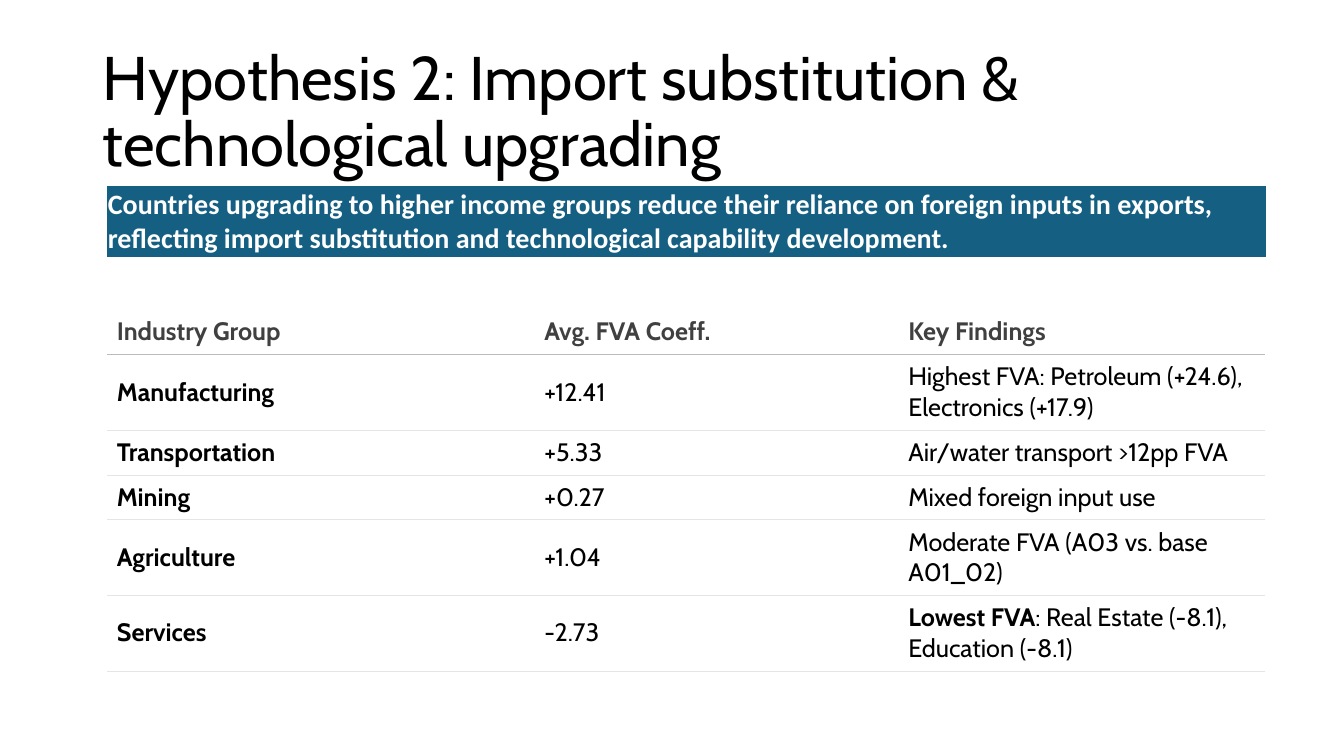
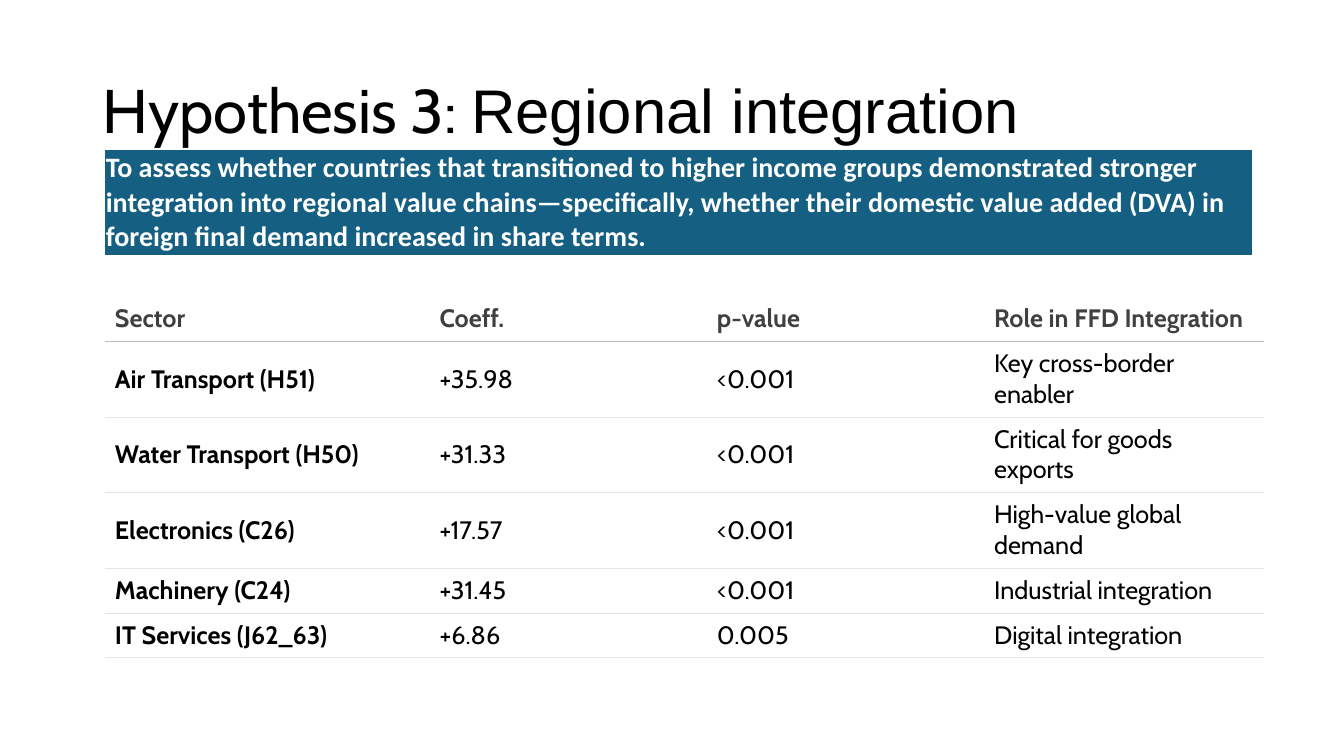
from dataclasses import dataclass

from lxml import etree
from pptx import Presentation
from pptx.dml.color import RGBColor
from pptx.enum.text import MSO_ANCHOR, MSO_AUTO_SIZE, PP_ALIGN
from pptx.oxml.ns import qn
from pptx.presentation import Presentation as Deck
from pptx.slide import Slide
from pptx.table import Table, _Cell
from pptx.text.text import _Paragraph
from pptx.util import Emu, Pt

MIDDLE = MSO_ANCHOR.MIDDLE
LEFT = PP_ALIGN.LEFT
NO_AUTOFIT = MSO_AUTO_SIZE.NONE

EMU_PER_PX = 9144  # 100 px to the inch
TITLE_ONLY_LAYOUT = 5


@dataclass(frozen=True)
class Theme:
    title_font: str = "Cabin"
    alternate_title_font: str = "Arial"
    table_font: str = "Cabin"
    banner_font: str = "Calibri"
    title_size: int = 44
    banner_size: int = 20
    table_size: int = 18
    rule_width: float = 0.33
    text: str = "000000"
    header_text: str = "404040"
    banner_text: str = "FFFFFF"
    banner_fill: str = "156082"
    cell_fill: str = "FFFFFF"
    header_rule: str = "BBBBBB"
    row_rule: str = "E5E5E5"


THEME = Theme()


@dataclass(frozen=True)
class Box:
    left: int
    top: int
    width: int
    height: int


@dataclass(frozen=True)
class TextPart:
    text: str
    bold: bool = False
    font: str = THEME.title_font


CellText = str | tuple[TextPart, ...]


@dataclass(frozen=True)
class Row:
    cells: tuple[CellText, ...]
    lines: int = 1


@dataclass(frozen=True)
class HypothesisSlide:
    title: tuple[TextPart, ...]
    banner: str
    banner_box: Box
    table_left: int
    table_top: int
    column_widths: tuple[int, ...]
    rows: tuple[Row, ...]


TITLE_BOX = Box(92, 40, 1150, 145)
ROW_HEIGHTS = {1: 44, 2: 75}
CELL_INSET = 7
FIRST_COLUMN_INSET = 10
BANNER_INSET = 1

SLIDES = (
    HypothesisSlide(
        title=(TextPart("Hypothesis 2: Import substitution & technological upgrading"),),
        banner=(
            "Countries upgrading to higher income groups reduce their reliance on foreign "
            "inputs in exports, reflecting import substitution and technological capability "
            "development."
        ),
        banner_box=Box(106, 185, 1150, 69),
        table_left=106,
        table_top=307,
        column_widths=(427, 361, 361),
        rows=(
            Row(("Industry Group", "Avg. FVA Coeff.", "Key Findings")),
            Row(("Manufacturing", "+12.41",
                 "Highest FVA: Petroleum (+24.6), Electronics (+17.9)"), lines=2),
            Row(("Transportation", "+5.33", "Air/water transport >12pp FVA")),
            Row(("Mining", "+0.27", "Mixed foreign input use")),
            Row(("Agriculture", "+1.04", "Moderate FVA (A03 vs. base A01_02)"), lines=2),
            Row(("Services", "-2.73",
                 (TextPart("Lowest FVA", bold=True),
                  TextPart(": Real Estate (-8.1), Education (-8.1)"))), lines=2),
        ),
    ),
    HypothesisSlide(
        title=(
            TextPart("Hypothesis 3: "),
            TextPart("Regional integration", font=THEME.alternate_title_font),
        ),
        banner=(
            "To assess whether countries that transitioned to higher income groups "
            "demonstrated stronger integration into regional value chains—specifically, "
            "whether their domestic value added (DVA) in foreign final demand increased "
            "in share terms."
        ),
        banner_box=Box(104, 149, 1138, 102),
        table_left=104,
        table_top=294,
        column_widths=(325, 275, 275, 275),
        rows=(
            Row(("Sector", "Coeff.", "p-value", "Role in FFD Integration")),
            Row(("Air Transport (H51)", "+35.98", "<0.001", "Key cross-border enabler"), lines=2),
            Row(("Water Transport (H50)", "+31.33", "<0.001", "Critical for goods exports"), lines=2),
            Row(("Electronics (C26)", "+17.57", "<0.001", "High-value global demand"), lines=2),
            Row(("Machinery (C24)", "+31.45", "<0.001", "Industrial integration")),
            Row(("IT Services (J62_63)", "+6.86", "0.005", "Digital integration")),
        ),
    ),
)


def px(length: int) -> Emu:
    return Emu(length * EMU_PER_PX)


def add_text(paragraph: _Paragraph, text: str, *, font: str, size: int,
             color: str, bold: bool = False) -> None:
    run = paragraph.add_run()
    run.text = text
    run.font.name = font
    run.font.size = Pt(size)
    run.font.bold = bold
    run.font.color.rgb = RGBColor.from_string(color)


def set_borders(cell: _Cell, **colors: str | None) -> None:
    """Set cell borders by side, in the order L, R, T, B; None hides a border."""
    properties = cell._tc.get_or_add_tcPr()
    for side, color in colors.items():
        line = etree.SubElement(properties, qn(f"a:ln{side}"), w=str(Pt(THEME.rule_width)))
        if color is None:
            etree.SubElement(line, qn("a:noFill"))
        else:
            fill = etree.SubElement(line, qn("a:solidFill"))
            etree.SubElement(fill, qn("a:srgbClr"), val=color)


def format_cell(cell: _Cell, *, fill: str, inset: int, left_inset: int,
                top_rule: str | None = None, bottom_rule: str | None = None) -> None:
    set_borders(cell, L=None, R=None, T=top_rule, B=bottom_rule)
    cell.fill.solid()
    cell.fill.fore_color.rgb = RGBColor.from_string(fill)
    cell.vertical_anchor = MIDDLE
    cell.margin_left = px(left_inset)
    cell.margin_right = cell.margin_top = cell.margin_bottom = px(inset)


def add_plain_table(slide: Slide, left: int, top: int, column_widths: tuple[int, ...],
                    row_heights: tuple[int, ...]) -> Table:
    """Add a table without header or banding style."""
    frame = slide.shapes.add_table(
        len(row_heights), len(column_widths),
        px(left), px(top), px(sum(column_widths)), px(sum(row_heights)),
    )
    table = frame.table
    table.first_row = table.horz_banding = False
    for column, width in zip(table.columns, column_widths):
        column.width = px(width)
    for row, height in zip(table.rows, row_heights):
        row.height = px(height)
    return table


def add_title(slide: Slide, parts: tuple[TextPart, ...]) -> None:
    title = slide.shapes.title
    title.left, title.top = px(TITLE_BOX.left), px(TITLE_BOX.top)
    title.width, title.height = px(TITLE_BOX.width), px(TITLE_BOX.height)
    frame = title.text_frame
    frame.auto_size = NO_AUTOFIT
    frame.word_wrap = True
    frame.vertical_anchor = MIDDLE
    paragraph = frame.paragraphs[0]
    paragraph.alignment = LEFT
    paragraph.line_spacing = 0.9
    for part in parts:
        add_text(paragraph, part.text, font=part.font, size=THEME.title_size, color=THEME.text)


def add_banner(slide: Slide, text: str, box: Box) -> None:
    table = add_plain_table(slide, box.left, box.top, (box.width,), (box.height,))
    cell = table.cell(0, 0)
    format_cell(cell, fill=THEME.banner_fill, inset=BANNER_INSET, left_inset=BANNER_INSET)
    add_text(cell.text_frame.paragraphs[0], text, font=THEME.banner_font,
             size=THEME.banner_size, color=THEME.banner_text, bold=True)


def add_findings_table(slide: Slide, content: HypothesisSlide) -> None:
    heights = tuple(ROW_HEIGHTS[row.lines] for row in content.rows)
    table = add_plain_table(slide, content.table_left, content.table_top,
                            content.column_widths, heights)
    for row_index, row in enumerate(content.rows):
        is_header = row_index == 0
        top_rule = (None, THEME.header_rule, THEME.row_rule)[min(row_index, 2)]
        bottom_rule = THEME.header_rule if is_header else THEME.row_rule
        color = THEME.header_text if is_header else THEME.text
        for column_index, text in enumerate(row.cells):
            is_first = column_index == 0
            cell = table.cell(row_index, column_index)
            format_cell(cell, fill=THEME.cell_fill, inset=CELL_INSET,
                        left_inset=FIRST_COLUMN_INSET if is_first else CELL_INSET,
                        top_rule=top_rule, bottom_rule=bottom_rule)
            parts = (TextPart(text, bold=is_header or is_first),) if isinstance(text, str) else text
            for part in parts:
                add_text(cell.text_frame.paragraphs[0], part.text, font=THEME.table_font,
                         size=THEME.table_size, color=color, bold=part.bold)


def add_hypothesis_slide(presentation: Deck, content: HypothesisSlide) -> None:
    slide = presentation.slides.add_slide(presentation.slide_layouts[TITLE_ONLY_LAYOUT])
    add_title(slide, content.title)
    add_banner(slide, content.banner, content.banner_box)
    add_findings_table(slide, content)


def main() -> None:
    presentation = Presentation()
    presentation.slide_width = px(1333)
    presentation.slide_height = px(750)
    for content in SLIDES:
        add_hypothesis_slide(presentation, content)
    presentation.save("out.pptx")


if __name__ == "__main__":
    main()
